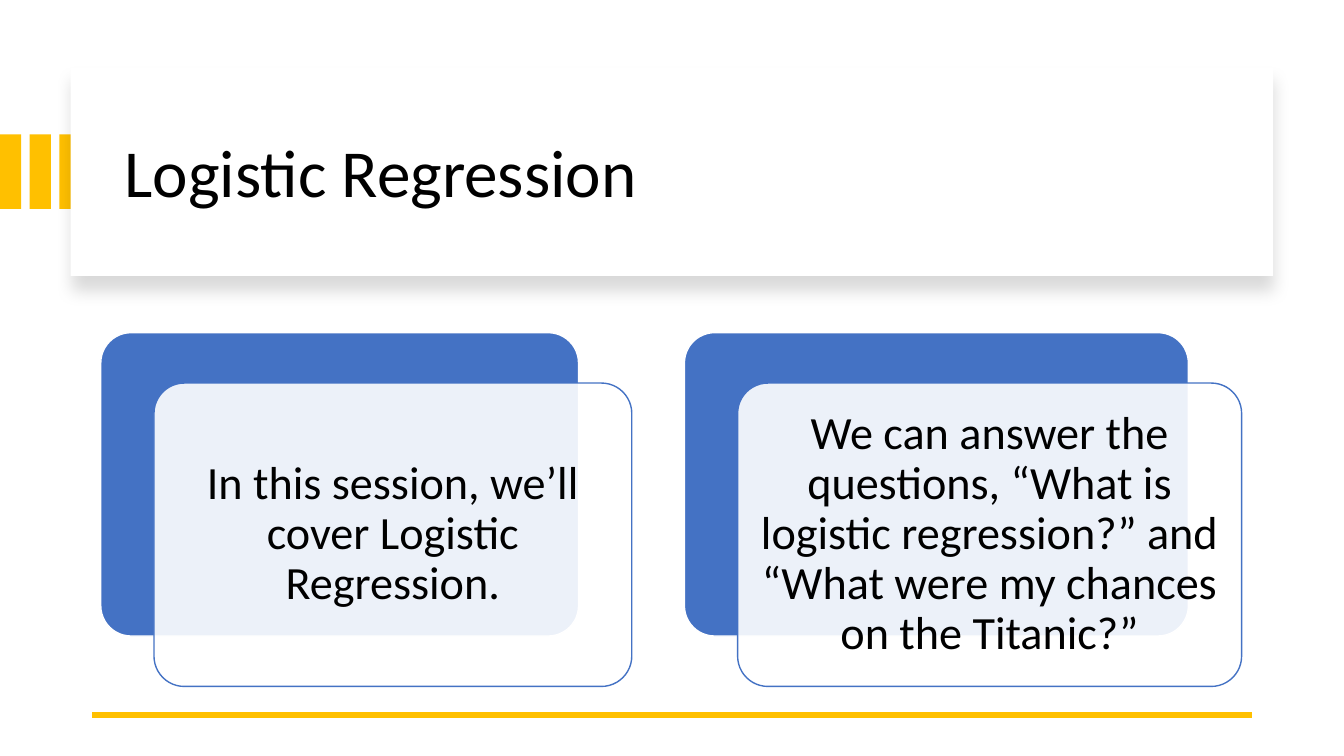
"""Build the Logistic Regression overview slide."""
from lxml import etree
from pptx import Presentation
from pptx.dml.color import RGBColor
from pptx.enum.shapes import MSO_CONNECTOR as CONN, MSO_SHAPE as SHAPE
from pptx.enum.text import MSO_ANCHOR as ANCHOR, PP_ALIGN as ALIGN
from pptx.oxml.ns import qn
from pptx.util import Pt

COLORS = {"gold": "FFC000", "blue": "4472C4", "white": "FFFFFF", "black": "000000"}
FONT = "Calibri"
CARDS = [
    (72, 341.3, "In this session, we’ll cover Logistic Regression."),
    (488.9, 360, "We can answer the questions, “What is logistic regression?” "
                 "and “What were my chances on the Titanic?”"),
]


def rgb(name):
    return RGBColor.from_string(COLORS[name])


def add_box(s, kind, left, top, width, height, fill, line=None):
    sp = s.shapes.add_shape(kind, Pt(left), Pt(top), Pt(width), Pt(height))
    sp.shadow.inherit = False
    sp.fill.solid()
    sp.fill.fore_color.rgb = rgb(fill)
    if line:
        sp.line.color.rgb = rgb(line)
        sp.line.width = Pt(1)
    else:
        sp.line.fill.background()
    return sp


def add_alpha(color, percent):
    etree.SubElement(color, qn("a:alpha"), val=str(percent * 1000))


def add_shadow(sp, blur, distance, percent):
    effects = sp._element.spPr.find(qn("a:effectLst"))
    shadow = etree.SubElement(effects, qn("a:outerShdw"), blurRad=str(Pt(blur)),
                              dist=str(Pt(distance)), dir="5400000",
                              algn="t", rotWithShape="0")
    color = etree.SubElement(shadow, qn("a:srgbClr"), val=COLORS["black"])
    add_alpha(color, percent)


def set_text(sp, text, size, align, inset_x, inset_y):
    tf = sp.text_frame
    tf.word_wrap = True
    tf.vertical_anchor = ANCHOR.MIDDLE
    tf.margin_left = tf.margin_right = Pt(inset_x)
    tf.margin_top = tf.margin_bottom = Pt(inset_y)
    p = tf.paragraphs[0]
    p.alignment = align
    p.line_spacing = 0.9
    r = p.add_run()
    r.text = text
    r.font.size = Pt(size)
    r.font.name = FONT
    r.font.color.rgb = rgb("black")


def add_title(s, text):
    for i in range(3):
        add_box(s, SHAPE.RECTANGLE, i * 21.25, 96, 15.2, 53.2, "gold")
    panel = add_box(s, SHAPE.RECTANGLE, 50.4, 48.2, 859, 149, "white")
    add_shadow(panel, 11, 10, 15)
    title = s.shapes.add_textbox(Pt(82), Pt(64), Pt(801.4), Pt(122.4))
    set_text(title, text, 48, ALIGN.LEFT, 7.2, 3.6)


def add_card(s, left, width, text):
    top, height, step_x, step_y = 237.6, 216.7, 38, 36
    back = add_box(s, SHAPE.ROUNDED_RECTANGLE, left, top, width, height, "blue", "white")
    front = add_box(s, SHAPE.ROUNDED_RECTANGLE, left + step_x, top + step_y,
                    width, height, "white", "blue")
    for sp in (back, front):
        sp.adjustments[0] = 0.1
    add_alpha(front._element.spPr.find(qn("a:solidFill"))[0], 90)
    set_text(front, text, 33, ALIGN.CENTER, 10, 10)


def add_rule(s, left, right, y):
    rule = s.shapes.add_connector(CONN.STRAIGHT, Pt(right), Pt(y), Pt(left), Pt(y))
    rule.line.color.rgb = rgb("gold")
    rule.line.width = Pt(4.5)
    etree.SubElement(rule._element.spPr, qn("a:effectLst"))


def main():
    prs = Presentation()
    prs.slide_width, prs.slide_height = Pt(960), Pt(540)
    s = prs.slides.add_slide(prs.slide_layouts[6])
    add_title(s, "Logistic Regression")
    add_rule(s, 66, 894, 510.5)
    for left, width, text in CARDS:
        add_card(s, left, width, text)
    prs.save("out.pptx")


if __name__ == "__main__":
    main()
